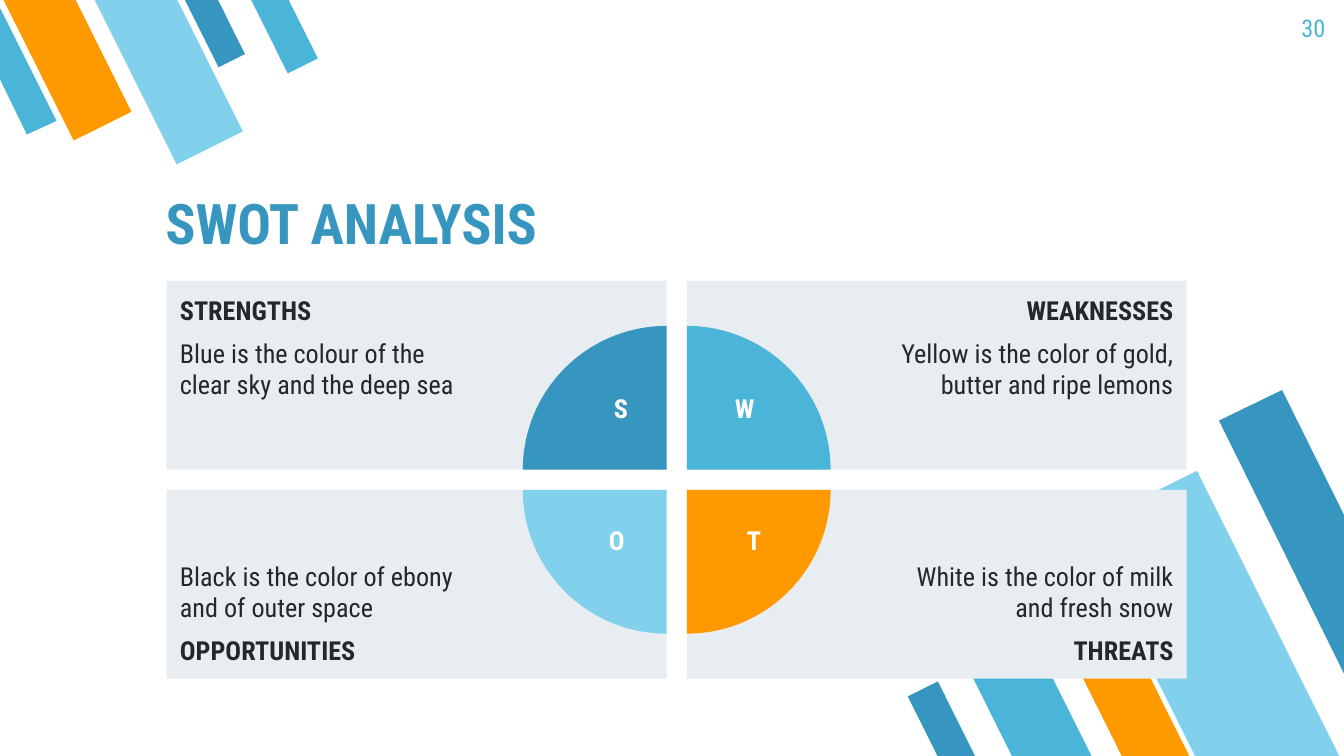
from pptx import Presentation
from pptx.dml.color import RGBColor
from pptx.enum.shapes import MSO_SHAPE
from pptx.enum.text import MSO_ANCHOR, MSO_AUTO_SIZE, PP_ALIGN
from pptx.util import Inches, Pt

RECT, PIE = MSO_SHAPE.RECTANGLE, MSO_SHAPE.PIE
BAR = MSO_SHAPE.FLOWCHART_MANUAL_INPUT
LEFT, RIGHT, CENTER = PP_ALIGN.LEFT, PP_ALIGN.RIGHT, PP_ALIGN.CENTER
TOP, BOTTOM = MSO_ANCHOR.TOP, MSO_ANCHOR.BOTTOM

WIDTH = 10
HEIGHT = WIDTH * 9 / 16
FONT = "Roboto Condensed"
BLUE, CYAN, SKY, ORANGE = "3796BF", "4BB5D9", "81D1EC", "FF9900"
PANEL, INK, WHITE = "E8EDF1", "252729", "FFFFFF"

# Bars in percent of their corner box: left, top, width, height, colour
TOP_BARS = [
    (29.8, -2.8, 4.4, 19.9, BLUE),
    (5.2, -6.4, 9.6, 42, ORANGE),
    (19.6, -7.1, 11, 48.8, SKY),
    (39.8, -3.5, 5, 22.1, CYAN),
]
TOP_EDGE_BAR = [(4, 35.6), (8.4, 32), (0, 2.1), (0, 21)]
BOTTOM_BARS = [
    (46.6, 60.1, 10.6, 47, CYAN),
    (70.6, 27.7, 19.2, 85, SKY),
    (63.6, 66.5, 9, 39.5, ORANGE),
    (37.6, 81.1, 5, 22.1, BLUE),
]
BOTTOM_EDGE_BAR = [(90.8, 3.2), (81.4, 11.3), (100, 78.2), (100, 36.2)]

# Column, row, heading, body, letter, letter distance, colour, pie rotation
QUADRANTS = [
    (0, 0, "STRENGTHS", "Blue is the colour of the clear sky and the deep sea",
     "S", 0.34, BLUE, 0),
    (1, 0, "WEAKNESSES", "Yellow is the color of gold, butter and ripe lemons",
     "W", 0.43, CYAN, 90),
    (0, 1, "OPPORTUNITIES", "Black is the color of ebony and of outer space",
     "O", 0.37, SKY, 270),
    (1, 1, "THREATS", "White is the color of milk and fresh snow",
     "T", 0.5, ORANGE, 180),
]


def rgb(value):
    return RGBColor.from_string(value)


def paint(sp, color):
    sp.fill.solid()
    sp.fill.fore_color.rgb = rgb(color)
    sp.line.fill.background()
    sp.shadow.inherit = False


def add_shape(slide, kind, box, color):
    sp = slide.shapes.add_shape(kind, *map(Inches, box))
    paint(sp, color)
    return sp


def set_frame(tf, insets, anchor=TOP, wrap=True):
    tf.auto_size = MSO_AUTO_SIZE.NONE
    tf.word_wrap = wrap
    tf.vertical_anchor = anchor
    (tf.margin_left, tf.margin_top,
     tf.margin_right, tf.margin_bottom) = map(Inches, insets)


def write(p, text, size, color, bold=False, align=LEFT):
    p.text = text
    p.alignment = align
    font = p.runs[0].font
    font.name, font.size, font.bold = FONT, Pt(size), bold
    font.color.rgb = rgb(color)


def add_label(slide, box, text, size, color, insets, bold=False, align=LEFT, wrap=True):
    tf = slide.shapes.add_textbox(*map(Inches, box)).text_frame
    set_frame(tf, insets, wrap=wrap)
    write(tf.paragraphs[0], text, size, color, bold, align)


def add_corner(slide, box, bars, rotation, edge_points, edge_color):
    left, top, width, height = box

    # Slanted bars
    for x, y, w, h, color in bars:
        sp = add_shape(slide, BAR, (left + x * width / 100, top + y * height / 100,
                                    w * width / 100, h * height / 100), color)
        sp.rotation = rotation
        sp.element.spPr.xfrm.set("flipH", "1")

    # Bar cut off by the slide edge
    points = [(Inches(left + x * width / 100), Inches(top + y * height / 100))
              for x, y in edge_points]
    builder = slide.shapes.build_freeform(*points[0])
    builder.add_line_segments(points[1:], close=True)
    paint(builder.convert_to_shape(), edge_color)


def add_quadrant(slide, box, col, row, heading, body, letter, distance, color, rotation):
    left, top, width, height = box

    # Panel, with room for the pie on its inner side
    tf = add_shape(slide, RECT, box, PANEL).text_frame
    insets = (1.5, 0.1, 0.1, 0.1) if col else (0.1, 0.1, 1.5, 0.1)
    set_frame(tf, insets, BOTTOM if row else TOP)
    lines = [(heading, True), (body, False)]
    if row:
        lines.reverse()
    first, second = tf.paragraphs[0], tf.add_paragraph()
    for p, (text, bold) in zip((first, second), lines):
        write(p, text, 14, INK, bold, RIGHT if col else LEFT)
    second.space_before = second.space_after = Pt(6)

    # Quarter pie centred on the inner corner
    radius = 1.07
    cx = left if col else left + width
    cy = top if row else top + height
    pie = add_shape(slide, PIE, (cx - radius, cy - radius, 2 * radius, 2 * radius), color)
    pie.adjustments[0], pie.adjustments[1] = 108, 162
    pie.rotation = rotation

    # Letter
    w, h = 0.3, 0.45
    x = cx + (distance if col else -distance)
    y = cy + (0.43 if row else -0.4)
    add_label(slide, (x - w / 2, y - h / 2, w, h), letter, 14, WHITE,
              (0, 0.05, 0, 0.05), True, CENTER, wrap=False)


def add_matrix(slide, box, gap):
    left, top, width, height = box
    w, h = (width - gap) / 2, (height - gap) / 2
    for col, row, *content in QUADRANTS:
        cell = (left + col * (w + gap), top + row * (h + gap), w, h)
        add_quadrant(slide, cell, col, row, *content)


def add_title(slide, box, text):
    title = slide.shapes.title
    title.left, title.top, title.width, title.height = map(Inches, box)
    set_frame(title.text_frame, (0.1,) * 4, BOTTOM)
    write(title.text_frame.paragraphs[0], text, 30, BLUE, True)


def main():
    prs = Presentation()
    prs.slide_width, prs.slide_height = Inches(WIDTH), Inches(HEIGHT)
    slide = prs.slides.add_slide(prs.slide_layouts[5])

    # Corner decoration, each in a quarter of the slide
    w, h = WIDTH / 2, HEIGHT / 2
    add_corner(slide, (w, h, w, h), BOTTOM_BARS, 153.5, BOTTOM_EDGE_BAR, BLUE)
    add_corner(slide, (0, 0, w, h), TOP_BARS, 333.5, TOP_EDGE_BAR, CYAN)

    # Title, slide number and matrix
    add_title(slide, (1.13, 1.26, 6.3, 0.74), "SWOT ANALYSIS")
    add_label(slide, (9.36, 0, 0.6, 0.43), "30", 13, CYAN, (0.1,) * 4, align=RIGHT)
    add_matrix(slide, (1.24, 2.09, 7.59, 2.96), 0.15)

    prs.save("out.pptx")


if __name__ == "__main__":
    main()
